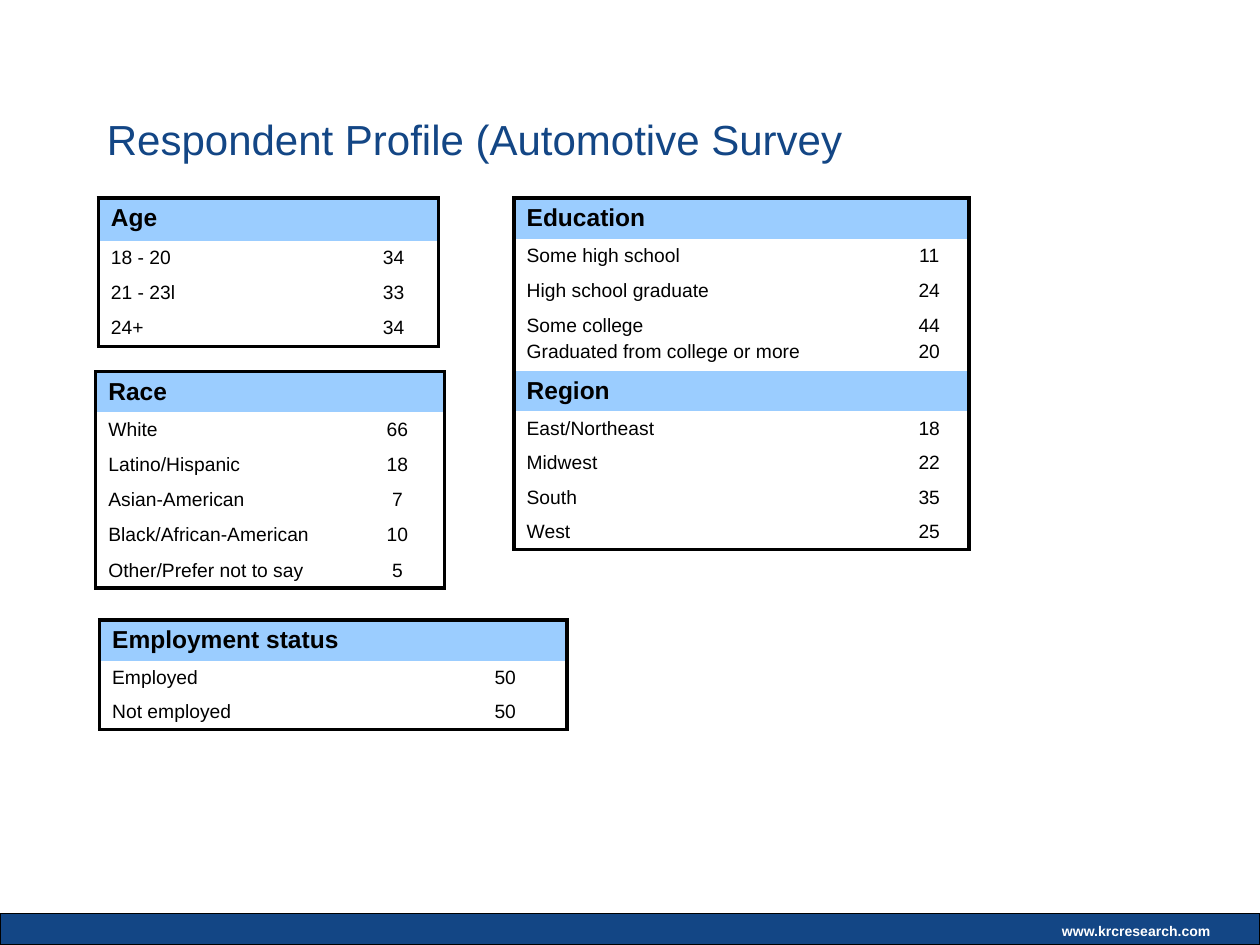
"""Build the respondent profile slide with its survey tables."""
from lxml import etree
from pptx import Presentation
from pptx.dml.color import RGBColor
from pptx.enum import shapes, text
from pptx.oxml.ns import qn
from pptx.util import Inches, Pt

COLORS = {"navy": "134685", "header": "9BCDFF", "black": "000000", "white": "FFFFFF"}
HEADER, ROW, SHORT_ROW = 0.32, 0.28, 0.27


class ProfileSlide:
    def __init__(self, slide, font="Arial"):
        self.slide = slide
        self.font = font

    def color(self, name):
        return RGBColor.from_string(COLORS[name])

    def add_words(self, paragraph, words, size, color, bold=False):
        run = paragraph.add_run()
        run.text = words
        run.font.name = self.font
        run.font.size = Pt(size)
        run.font.bold = bold
        run.font.color.rgb = self.color(color)

    def bar(self, left, top, width, height):
        shape = self.slide.shapes.add_shape(
            shapes.MSO_SHAPE.RECTANGLE, *map(Inches, (left, top, width, height)))
        shape.shadow.inherit = False
        shape.fill.solid()
        shape.fill.fore_color.rgb = self.color("navy")
        shape.line.color.rgb = self.color("black")
        shape.line.width = Pt(0.75)

    def text_box(self, left, top, width, height, words, size, color, bold=False, wrap=True):
        frame = self.slide.shapes.add_textbox(
            *map(Inches, (left, top, width, height))).text_frame
        frame.word_wrap = wrap
        frame.vertical_anchor = text.MSO_ANCHOR.MIDDLE
        self.add_words(frame.paragraphs[0], words, size, color, bold)

    def border(self, cell, sides):
        properties = cell._tc.get_or_add_tcPr()
        for side in "LRTB":
            line = etree.SubElement(properties, qn(f"a:ln{side}"))
            if side in sides:
                line.set("w", str(Pt(2.25)))
                fill = etree.SubElement(line, qn("a:solidFill"))
                etree.SubElement(fill, qn("a:srgbClr"), val=COLORS["black"])
            else:
                line.set("w", "0")
                etree.SubElement(line, qn("a:noFill"))

    def fill_cell(self, cell, words, is_header, centered):
        cell.margin_bottom = Inches(0.04)
        if is_header:
            cell.fill.solid()
            cell.fill.fore_color.rgb = self.color("header")
        else:
            cell.fill.background()
        size = 14 if is_header else 11
        frame = cell.text_frame
        if not words:
            etree.SubElement(frame.paragraphs[0]._p, qn("a:endParaRPr"), sz=str(size * 100))
            return
        for index, line in enumerate(words.split("\n")):
            paragraph = frame.add_paragraph() if index else frame.paragraphs[0]
            if index:
                paragraph.space_before = Pt(2.2)
            if centered:
                paragraph.alignment = text.PP_ALIGN.CENTER
            self.add_words(paragraph, line, size, "black", is_header)

    def table(self, left, top, widths, heights, rows):
        """Draw label and value rows; a row without a value is a header."""
        last_row, last_column = len(rows) - 1, len(widths) - 1
        table = self.slide.shapes.add_table(
            len(rows), len(widths),
            *map(Inches, (left, top, sum(widths), sum(heights)))).table
        table.first_row = table.horz_banding = False
        for column, width in zip(table.columns, widths):
            column.width = Inches(width)
        for index, (height, (label, value)) in enumerate(zip(heights, rows)):
            table.rows[index].height = Inches(height)
            is_header = not value
            if last_column == 2:
                start = 0 if is_header else 1
                table.cell(index, start).merge(table.cell(index, start + 1))
            for column in range(last_column + 1):
                cell = table.cell(index, column)
                end = column + (cell.span_width - 1 if cell.is_merge_origin else 0)
                sides = ("L" * (column == 0) + "R" * (end == last_column)
                         + "T" * (index == 0) + "B" * (index == last_row))
                self.border(cell, sides)
                words = (label, value, "")[column]
                self.fill_cell(cell, words, is_header, column > 0)


def main():
    presentation = Presentation()
    presentation.slide_width, presentation.slide_height = Inches(10), Inches(7.5)
    profile = ProfileSlide(presentation.slides.add_slide(presentation.slide_layouts[6]))

    profile.bar(0, 7.25, 10, 0.25)
    profile.text_box(8.33, 7.27, 1.39, 0.23, "www.krcresearch.com", 8, "white",
                     bold=True, wrap=False)
    profile.text_box(0.75, 0.64, 8.5, 0.92, "Respondent Profile (Automotive Survey", 24, "navy")

    profile.table(0.78, 1.57, [1.99, 0.71], [0.34] + [ROW] * 3, [
        ("Age", ""), ("18 - 20", "34"), ("21 - 23l", "33"), ("24+", "34")])
    profile.table(4.08, 1.57, [2.98, 0.63],
                  [HEADER, ROW, ROW, 0.47, HEADER] + [SHORT_ROW] * 4, [
        ("Education", ""),
        ("Some high school", "11"),
        ("High school graduate", "24"),
        ("Some college\nGraduated from college or more", "44\n20"),
        ("Region", ""),
        ("East/Northeast", "18"), ("Midwest", "22"), ("South", "35"), ("West", "25")])
    profile.table(0.76, 2.95, [2.02, 0.2, 0.51], [HEADER] + [ROW] * 4 + [SHORT_ROW], [
        ("Race", ""),
        ("White", "66"),
        ("Latino/Hispanic", "18"),
        ("Asian-American", "7"),
        ("Black/African-American", "10"),
        ("Other/Prefer not to say", "5")])
    profile.table(0.79, 4.92, [2.73, 0.98], [HEADER] + [SHORT_ROW] * 2, [
        ("Employment status", ""), ("Employed", "50"), ("Not employed", "50")])

    presentation.save("out.pptx")


if __name__ == "__main__":
    main()
